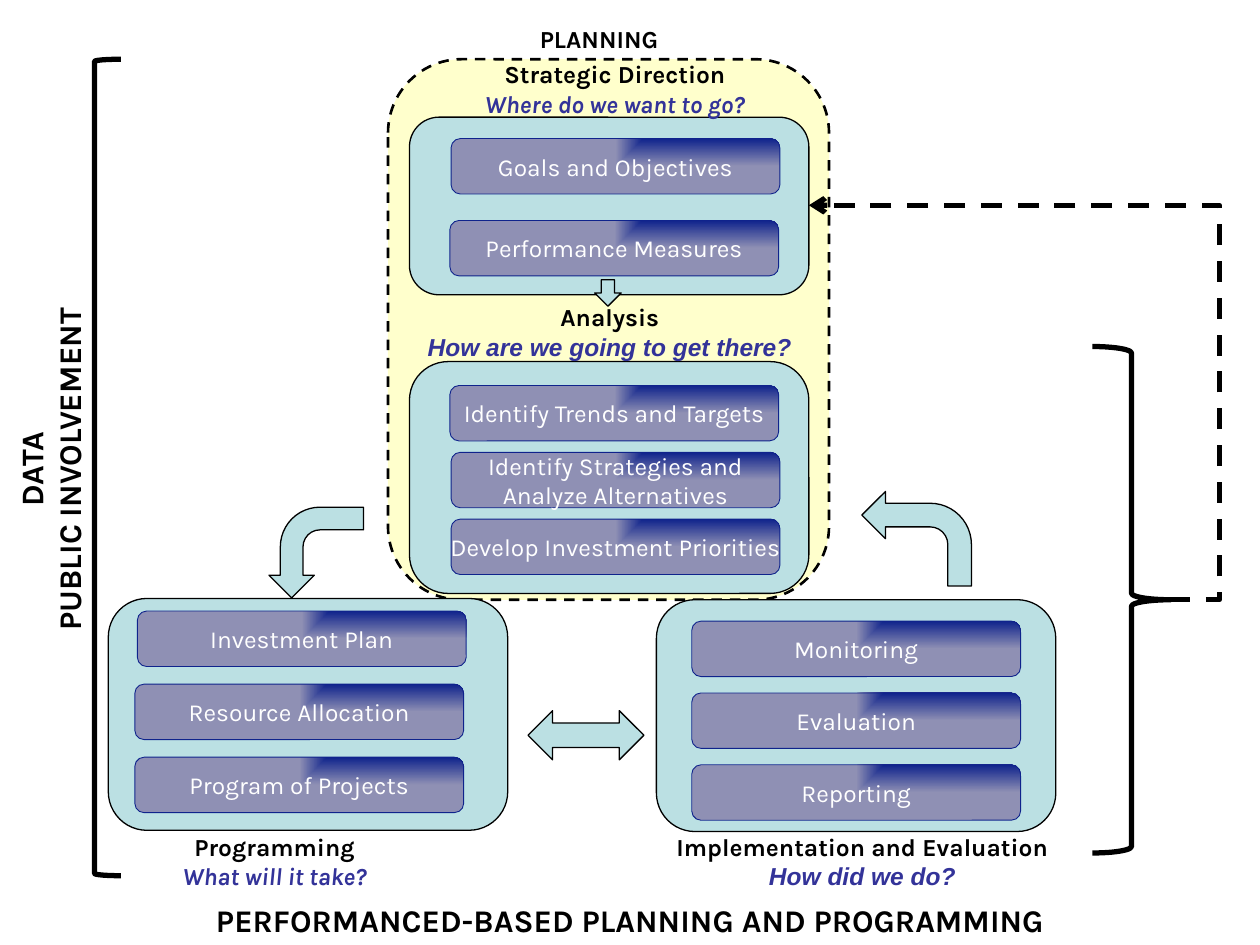
from lxml import etree
from pptx import Presentation
from pptx.dml.color import RGBColor
from pptx.enum.dml import MSO_LINE
from pptx.enum.shapes import MSO_CONNECTOR, MSO_SHAPE
from pptx.enum.text import MSO_ANCHOR, MSO_AUTO_SIZE, PP_ALIGN
from pptx.oxml.ns import qn
from pptx.util import Pt

PX = 9144  # EMU in one px, 100 px to the inch
ROUNDED = MSO_SHAPE.ROUNDED_RECTANGLE
BENT_ARROW = MSO_SHAPE.BENT_ARROW
DOWN_ARROW = MSO_SHAPE.DOWN_ARROW
DOUBLE_ARROW = MSO_SHAPE.LEFT_RIGHT_ARROW
BRACE = MSO_SHAPE.RIGHT_BRACE
BRACKET = MSO_SHAPE.LEFT_BRACKET
ELBOW = MSO_CONNECTOR.ELBOW
DASH = MSO_LINE.DASH
CENTER = PP_ALIGN.CENTER
MIDDLE = MSO_ANCHOR.MIDDLE
GROW = MSO_AUTO_SIZE.SHAPE_TO_FIT_TEXT

COLORS = {
    "black": "000000",
    "white": "FFFFFF",
    "yellow": "FFFFCC",
    "aqua": "BBE0E3",
    "navy": "0F238C",
    "haze": "8F90B4",
    "indigo": "333399",
}
FORMATS = {
    "title": {"name": "Karla", "size": Pt(18), "bold": True, "color": "black"},
    "heading": {"name": "Karla", "size": Pt(14), "bold": True, "color": "black"},
    "question": {"name": "Karla", "size": Pt(14), "bold": True, "italic": True,
                 "color": "indigo"},
    "arial question": {"name": "Arial", "size": Pt(14), "bold": True, "italic": True,
                       "color": "indigo"},
    "button": {"name": "Karla", "size": Pt(14), "color": "white"},
}
PANEL_WIDTH = 317
BUTTON_SIZE = (261, 44)

# left, top, height, buttons as (left, top, lines)
PANELS = [
    (325, 287, 184, [
        (357, 306, ["Identify Trends and Targets"]),
        (358, 359, ["Identify Strategies and", "Analyze Alternatives"]),
        (358, 412, ["Develop Investment Priorities"]),
    ]),
    (325, 93, 141, [
        (358, 110, ["Goals and Objectives"]),
        (357, 175, ["Performance Measures"]),
    ]),
    (86, 475, 184, [
        (109, 485, ["Investment Plan"]),
        (107, 543, ["Resource Allocation"]),
        (107, 601, ["Program of Projects"]),
    ]),
    (521, 476, 184, [
        (549, 493, ["Monitoring"]),
        (549, 550, ["Evaluation"]),
        (549, 607, ["Reporting"]),
    ]),
]
# left, top, width, heading, question, question format
PHASE_LABELS = [
    (349, 47, 278, "Strategic Direction", "Where do we want to go?", "question"),
    (333, 240, 302, "Analysis", "How are we going to get there?", "arial question"),
    (128, 660, 180, "Programming", "What will it take?", "question"),
    (528, 660, 313, "Implementation and Evaluation", "How did we do?", "arial question"),
]
# preset, left, top, width, height, rotation, flipped
BLOCK_ARROWS = [
    (DOWN_ARROW, 472, 222, 21, 21, 0, False),
    (BENT_ARROW, 215, 401, 72, 75, 90, True),
    (BENT_ARROW, 684, 390, 87, 75, 180, True),
    (DOUBLE_ARROW, 419, 564, 92, 39, 0, False),
]


class Diagram:
    def __init__(self, slide):
        self.slide = slide

    def color(self, name):
        return RGBColor.from_string(COLORS[name])

    def emu(self, *lengths):
        return [length * PX for length in lengths]

    def outline(self, line, color, width, dash=None):
        line.color.rgb = self.color(color)
        line.width = Pt(width)
        if dash is not None:
            line.dash_style = dash

    def set_lines(self, frame, lines):
        """Fill a text frame with centred (text, format name) paragraphs."""
        for index, (text, format_name) in enumerate(lines):
            paragraph = frame.paragraphs[0] if index == 0 else frame.add_paragraph()
            paragraph.alignment = CENTER
            run = paragraph.add_run()
            run.text = text
            for attribute, value in FORMATS[format_name].items():
                if attribute == "color":
                    run.font.color.rgb = self.color(value)
                else:
                    setattr(run.font, attribute, value)

    def shape(self, preset, box, fill=None, line="black", width=0.75, dash=None):
        shape = self.slide.shapes.add_shape(preset, *self.emu(*box))
        shape.shadow.inherit = False
        if fill:
            shape.fill.solid()
            shape.fill.fore_color.rgb = self.color(fill)
        else:
            shape.fill.background()
        self.outline(shape.line, line, width, dash)
        return shape

    def button(self, left, top, lines):
        shape = self.shape(ROUNDED, (left, top, *BUTTON_SIZE), "navy", "navy", 0.5)
        self.corner_gradient(shape)
        shape.text_frame.word_wrap = False
        shape.text_frame.vertical_anchor = MIDDLE
        self.set_lines(shape.text_frame, [(line, "button") for line in lines])

    def corner_gradient(self, shape):
        """Shade the shape from navy in its top right corner to haze."""
        shape.fill.gradient()
        for stop, name in zip(shape.fill.gradient_stops, ("navy", "haze")):
            stop.color.rgb = self.color(name)
        gradient = shape._element.spPr.find(qn("a:gradFill"))
        gradient.remove(gradient.find(qn("a:lin")))
        shade = etree.SubElement(gradient, qn("a:path"))
        shade.set("path", "rect")
        focus = etree.SubElement(shade, qn("a:fillToRect"))
        focus.set("l", "100000")
        focus.set("b", "100000")

    def panel(self, left, top, height, buttons):
        self.shape(ROUNDED, (left, top, PANEL_WIDTH, height), "aqua")
        for button in buttons:
            self.button(*button)

    def block_arrow(self, preset, left, top, width, height, rotation, flipped):
        arrow = self.shape(preset, (left, top, width, height), "aqua")
        arrow.rotation = rotation
        if flipped:
            arrow._element.spPr.find(qn("a:xfrm")).set("flipV", "1")

    def label(self, box, lines, margins=True, rotation=0):
        label = self.slide.shapes.add_textbox(*self.emu(*box))
        label.rotation = rotation
        frame = label.text_frame
        frame.word_wrap = True
        frame.auto_size = GROW
        if not margins:
            for side in ("left", "top", "right", "bottom"):
                setattr(frame, f"margin_{side}", 0)
        self.set_lines(frame, lines)

    def feedback_arrow(self, begin, end, bend):
        """Draw a dashed elbow arrow; bend is a share of its width in 1/100000."""
        connector = self.slide.shapes.add_connector(ELBOW, *self.emu(*begin, *end))
        self.outline(connector.line, "black", 3, DASH)
        properties = connector._element.spPr
        geometry = properties.find(qn("a:prstGeom"))
        guide = etree.SubElement(geometry.find(qn("a:avLst")), qn("a:gd"))
        guide.set("name", "adj1")
        guide.set("fmla", f"val {bend}")
        head = etree.SubElement(properties.find(qn("a:ln")), qn("a:tailEnd"))
        head.set("type", "arrow")
        etree.SubElement(properties, qn("a:effectLst"))


def main():
    presentation = Presentation()
    presentation.slide_width = 1000 * PX
    presentation.slide_height = 750 * PX
    diagram = Diagram(presentation.slides.add_slide(presentation.slide_layouts[6]))

    diagram.shape(ROUNDED, (308, 47, 350, 429), "yellow", width=1.5, dash=DASH)
    for panel in PANELS:
        diagram.panel(*panel)
    for left, top, width, heading, question, question_format in PHASE_LABELS:
        diagram.label((left, top, width, 47),
                      [(heading, "heading"), (question, question_format)], margins=False)
    for arrow in BLOCK_ARROWS:
        diagram.block_arrow(*arrow)

    diagram.shape(BRACE, (867, 275, 62, 402), width=3)
    diagram.shape(BRACKET, (75, 47, 21, 648), width=3)
    diagram.feedback_arrow((928, 476), (642, 163), -14000)

    diagram.label((-284, 337, 648, 71),
                  [("DATA", "title"), ("PUBLIC INVOLVEMENT", "title")], rotation=270)
    diagram.label((351, 14, 249, 34), [("PLANNING", "heading")])
    diagram.label((0, 710, 1000, 40),
                  [("PERFORMANCED-BASED PLANNING AND PROGRAMMING", "title")])
    presentation.save("out.pptx")


if __name__ == "__main__":
    main()
